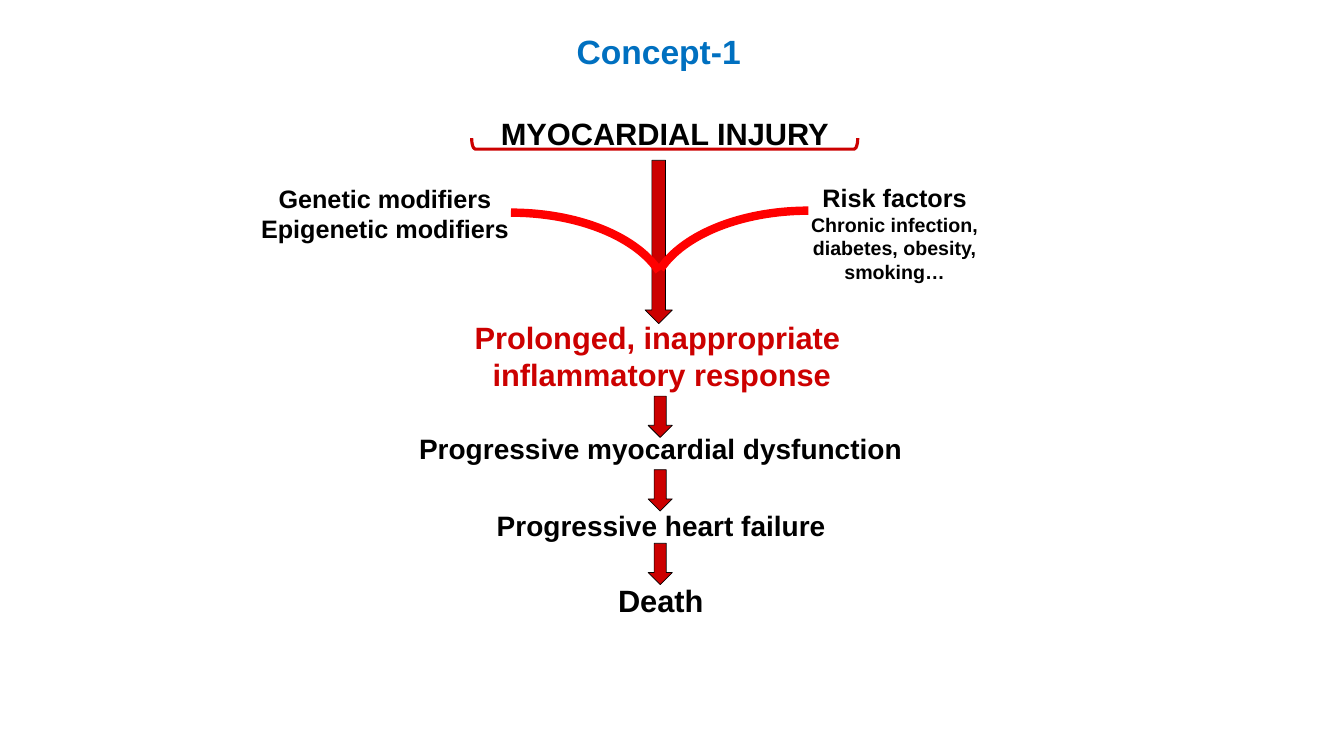
from dataclasses import dataclass

import pptx
import pptx.dml.color
import pptx.enum.shapes
import pptx.enum.text
import pptx.util

PX = 9144  # EMU per px, 100 px to the inch
SHAPE = pptx.enum.shapes.MSO_SHAPE
BLACK, BLUE, CRIMSON, RED = "000000", "0070C0", "CC0000", "FF0000"


@dataclass
class Box:
    x: int
    y: int
    w: int
    h: int

    def emu(self) -> list[int]:
        return [v * PX for v in (self.x, self.y, self.w, self.h)]


@dataclass
class Label:
    box: Box
    lines: list[str]
    size: int
    color: str = BLACK


def rgb(color: str) -> pptx.dml.color.RGBColor:
    return pptx.dml.color.RGBColor.from_string(color)


def style_paragraph(p, size: int, color: str) -> None:
    p.alignment = pptx.enum.text.PP_ALIGN.CENTER
    p.font.name = "Arial"
    p.font.size = pptx.util.Pt(size)
    p.font.bold = True
    p.font.color.rgb = rgb(color)


def add_label(s, label: Label):
    tf = s.shapes.add_textbox(*label.box.emu()).text_frame
    tf.word_wrap = True
    for i, line in enumerate(label.lines):
        p = tf.add_paragraph() if i else tf.paragraphs[0]
        p.text = line
        style_paragraph(p, label.size, label.color)
    return tf


def add_outline(s, kind, box: Box, color: str, width: float):
    sp = s.shapes.add_shape(kind, *box.emu())
    sp.shadow.inherit = False
    sp.fill.background()
    sp.line.color.rgb = rgb(color)
    sp.line.width = pptx.util.Pt(width)
    return sp


def add_arrow(s, box: Box) -> None:
    sp = add_outline(s, SHAPE.DOWN_ARROW, box, BLACK, 0.5)
    sp.fill.solid()
    sp.fill.fore_color.rgb = rgb(CRIMSON)


def add_arc(s, box: Box, flipped: bool) -> None:
    sp = add_outline(s, SHAPE.ARC, box, RED, 6)
    sp.adjustments[0], sp.adjustments[1] = 162, 208.62
    if flipped:
        sp._element.spPr.xfrm.set("flipH", "1")


LABELS = [
    Label(Box(394, 423, 523, 44), ["Progressive myocardial dysfunction"], 20),
    Label(Box(484, 109, 351, 47), ["MYOCARDIAL INJURY"], 22),
    Label(Box(452, 311, 409, 84),
          ["Prolonged, inappropriate \vinflammatory response"], 22, CRIMSON),
    Label(Box(474, 500, 364, 44), ["Progressive heart failure"], 20),
    Label(Box(535, 572, 241, 47), ["Death"], 22),
    Label(Box(237, 177, 290, 101),
          ["Genetic modifiers", "Epigenetic modifiers"], 18),
]
RISKS = Label(Box(768, 176, 239, 111),
              ["Risk factors ", "diabetes, obesity, smoking…"], 14)


def main() -> None:
    prs = pptx.Presentation()
    prs.slide_width, prs.slide_height = 12192000, 6858000
    s = prs.slides.add_slide(prs.slide_layouts[5])

    # Title
    title = s.shapes.title
    title.left, title.top, title.width, title.height = Box(538, 26, 231, 72).emu()
    tf = title.text_frame
    tf.text = "Concept-1"
    tf.vertical_anchor = pptx.enum.text.MSO_ANCHOR.TOP
    tf.auto_size = pptx.enum.text.MSO_AUTO_SIZE.NONE
    style_paragraph(tf.paragraphs[0], 24, BLUE)

    # Stages and modifiers
    for label in LABELS:
        add_label(s, label)

    # Risk factors: a larger heading run leads the first paragraph
    p = add_label(s, RISKS).paragraphs[0]
    p.runs[0].font.size = pptx.util.Pt(18)
    r = p.add_run()
    r.text = "Chronic infection,"

    # Bracket under the injury heading
    bracket = add_outline(s, SHAPE.LEFT_BRACKET, Box(654, -49, 11, 383), CRIMSON, 2.25)
    bracket.rotation = 270
    bracket.adjustments[0] = 0.325

    # Arrows between stages
    for i in range(3):
        add_arrow(s, Box(643, 393 + 73 * i, 24, 41))
    add_arrow(s, Box(640, 159, 27, 162))

    # Arcs joining the main arrow
    add_arc(s, Box(350, 211, 314, 180), flipped=False)
    add_arc(s, Box(645, 209, 314, 180), flipped=True)

    prs.save("out.pptx")


if __name__ == "__main__":
    main()
